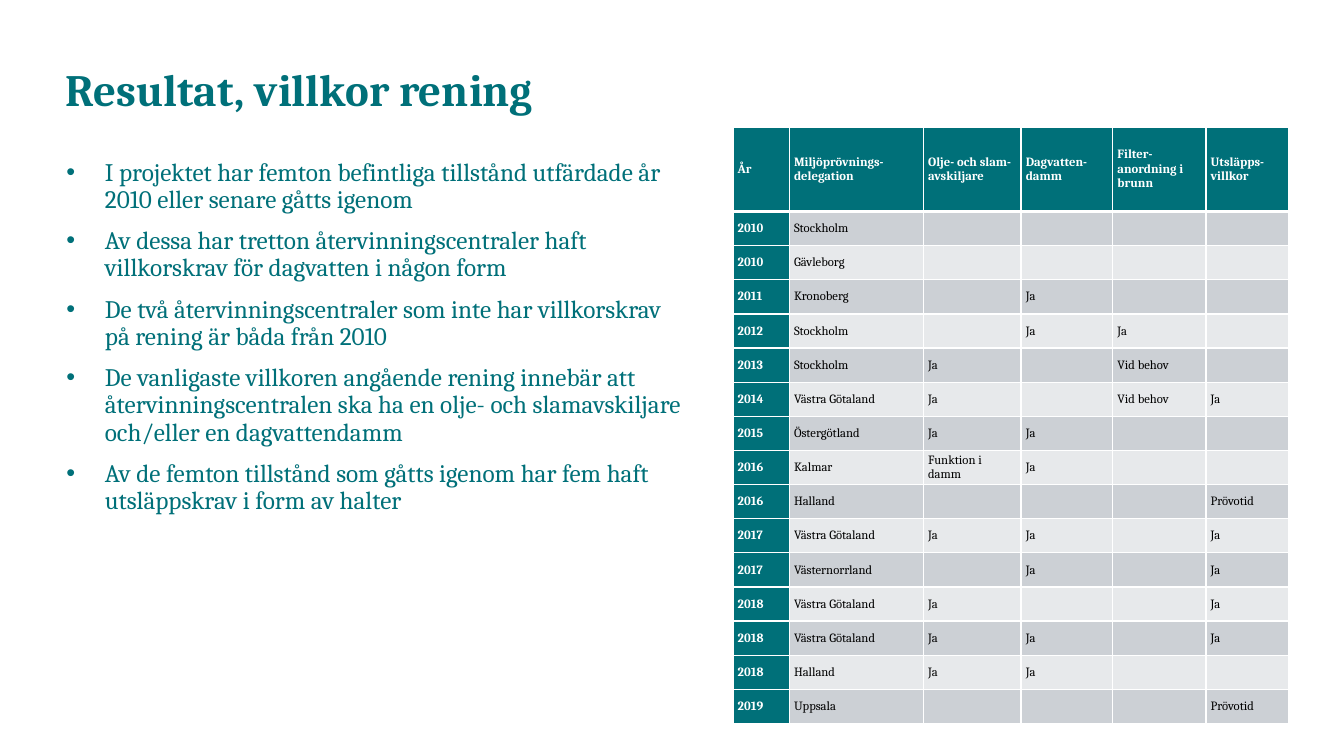
from dataclasses import astuple, dataclass

from lxml import etree
from pptx import Presentation
from pptx.dml.color import RGBColor
from pptx.enum.text import MSO_ANCHOR, MSO_AUTO_SIZE, PP_ALIGN
from pptx.oxml.ns import qn
from pptx.util import Cm, Pt

LEFT = PP_ALIGN.LEFT
TOP = MSO_ANCHOR.TOP
MIDDLE = MSO_ANCHOR.MIDDLE
NO_AUTOFIT = MSO_AUTO_SIZE.NONE

TEAL = RGBColor(0x00, 0x70, 0x79)
WHITE = RGBColor(0xFF, 0xFF, 0xFF)
BLACK = RGBColor(0x00, 0x00, 0x00)
DARK_BAND = RGBColor(0xCC, 0xD0, 0xD5)
LIGHT_BAND = RGBColor(0xE7, 0xE9, 0xEB)

FONT = "Cambria"
TABLE_TEXT_SIZE = 9
BULLET_INDENT = Cm(0.97)
COLUMN_WIDTHS = (1.42, 3.38, 2.46, 2.31, 2.35, 2.08)
HEADER_HEIGHT = 2.13
PERMIT_HEIGHT = 0.86


@dataclass(frozen=True)
class Box:
    left: float
    top: float
    width: float
    height: float


@dataclass(frozen=True)
class Permit:
    year: str
    delegation: str
    separator: str = ""
    pond: str = ""
    drain_filter: str = ""
    discharge: str = ""


TITLE_BOX = Box(1.4, 1.42, 19.48, 1.78)
FINDINGS_BOX = Box(1.42, 3.89, 16.08, 11.84)
TABLE_BOX = Box(18.47, 3.2, sum(COLUMN_WIDTHS), HEADER_HEIGHT + 15 * PERMIT_HEIGHT)

FINDINGS = (
    "I projektet har femton befintliga tillstånd utfärdade år 2010 eller senare gåtts igenom",
    "Av dessa har tretton återvinningscentraler haft villkorskrav för dagvatten i någon form",
    "De två återvinningscentraler som inte har villkorskrav på rening är båda från 2010",
    "De vanligaste villkoren angående rening innebär att återvinningscentralen ska ha "
    "en olje- och slamavskiljare och/eller en dagvattendamm",
    "Av de femton tillstånd som gåtts igenom har fem haft utsläppskrav i form av halter",
)

HEADER = Permit(
    "År", "Miljöprövnings-delegation", "Olje- och slam-avskiljare",
    "Dagvatten-damm", "Filter-anordning i brunn", "Utsläpps-villkor",
)
PERMITS = (
    Permit("2010", "Stockholm"),
    Permit("2010", "Gävleborg"),
    Permit("2011", "Kronoberg", pond="Ja"),
    Permit("2012", "Stockholm", pond="Ja", drain_filter="Ja"),
    Permit("2013", "Stockholm", separator="Ja", drain_filter="Vid behov"),
    Permit("2014", "Västra Götaland", separator="Ja", drain_filter="Vid behov", discharge="Ja"),
    Permit("2015", "Östergötland", separator="Ja", pond="Ja"),
    Permit("2016", "Kalmar", separator="Funktion i damm", pond="Ja"),
    Permit("2016", "Halland", discharge="Prövotid"),
    Permit("2017", "Västra Götaland", separator="Ja", pond="Ja", discharge="Ja"),
    Permit("2017", "Västernorrland", pond="Ja", discharge="Ja"),
    Permit("2018", "Västra Götaland", separator="Ja", discharge="Ja"),
    Permit("2018", "Västra Götaland", separator="Ja", pond="Ja", discharge="Ja"),
    Permit("2018", "Halland", separator="Ja", pond="Ja"),
    Permit("2019", "Uppsala", discharge="Prövotid"),
)


def write(paragraph, text: str, *, size: float, color: RGBColor, bold: bool = False,
          line_spacing: float = 1.0, space_before: float = 0, bullet: bool = False) -> None:
    paragraph.alignment = LEFT
    paragraph.line_spacing = line_spacing
    paragraph.space_before = Pt(space_before)
    if bullet:
        properties = paragraph._p.get_or_add_pPr()
        properties.set("marL", str(BULLET_INDENT))
        properties.set("indent", str(-BULLET_INDENT))
        etree.SubElement(properties, qn("a:buFont"), typeface="Arial")
        etree.SubElement(properties, qn("a:buChar"), char="•")
    if not text:
        paragraph._p.get_or_add_endParaRPr().set("sz", str(size * 100))
        return
    run = paragraph.add_run()
    run.text = text
    run.font.name = FONT
    run.font.size = Pt(size)
    run.font.bold = bold
    run.font.color.rgb = color


def place(placeholder, box: Box, anchor: MSO_ANCHOR):
    placeholder.left, placeholder.top = Cm(box.left), Cm(box.top)
    placeholder.width, placeholder.height = Cm(box.width), Cm(box.height)
    frame = placeholder.text_frame
    frame.word_wrap = True
    frame.auto_size = NO_AUTOFIT
    frame.vertical_anchor = anchor
    return frame


def add_borders(cell, top_width: float, bottom_width: float) -> None:
    properties = cell._tc.get_or_add_tcPr()
    for side, width in (("L", 1), ("R", 1), ("T", top_width), ("B", bottom_width)):
        line = etree.SubElement(properties, qn(f"a:ln{side}"), w=str(Pt(width)))
        fill = etree.SubElement(line, qn("a:solidFill"))
        etree.SubElement(fill, qn("a:srgbClr"), val=str(WHITE))


def draw_permit_table(slide, box: Box) -> None:
    table = slide.shapes.add_table(
        len(PERMITS) + 1, len(COLUMN_WIDTHS),
        Cm(box.left), Cm(box.top), Cm(box.width), Cm(box.height),
    ).table
    table.first_col = True
    for column, width in zip(table.columns, COLUMN_WIDTHS):
        column.width = Cm(width)
    for row_index, permit in enumerate((HEADER, *PERMITS)):
        is_header = row_index == 0
        table.rows[row_index].height = Cm(HEADER_HEIGHT if is_header else PERMIT_HEIGHT)
        band = DARK_BAND if row_index % 2 else LIGHT_BAND
        for column_index, value in enumerate(astuple(permit)):
            emphasized = is_header or column_index == 0
            cell = table.cell(row_index, column_index)
            cell.margin_left = cell.margin_right = Cm(0.12)
            cell.margin_top = cell.margin_bottom = 0
            cell.vertical_anchor = MIDDLE
            add_borders(cell, 3 if row_index == 1 else 1, 3 if is_header else 1)
            cell.fill.solid()
            cell.fill.fore_color.rgb = TEAL if emphasized else band
            write(cell.text_frame.paragraphs[0], value, size=TABLE_TEXT_SIZE,
                  color=WHITE if emphasized else BLACK, bold=emphasized)


def main() -> None:
    presentation = Presentation()
    presentation.slide_width, presentation.slide_height = Cm(33.87), Cm(19.05)
    slide = presentation.slides.add_slide(presentation.slide_layouts[1])

    heading = place(slide.shapes.title, TITLE_BOX, MIDDLE)
    write(heading.paragraphs[0], "Resultat, villkor rening", size=32, color=TEAL,
          bold=True, line_spacing=0.9)

    findings = place(slide.placeholders[1], FINDINGS_BOX, TOP)
    for index, finding in enumerate(FINDINGS):
        paragraph = findings.add_paragraph() if index else findings.paragraphs[0]
        write(paragraph, finding, size=18, color=TEAL, line_spacing=0.9,
              space_before=10 if index else 0, bullet=True)

    draw_permit_table(slide, TABLE_BOX)
    presentation.save("out.pptx")


if __name__ == "__main__":
    main()
